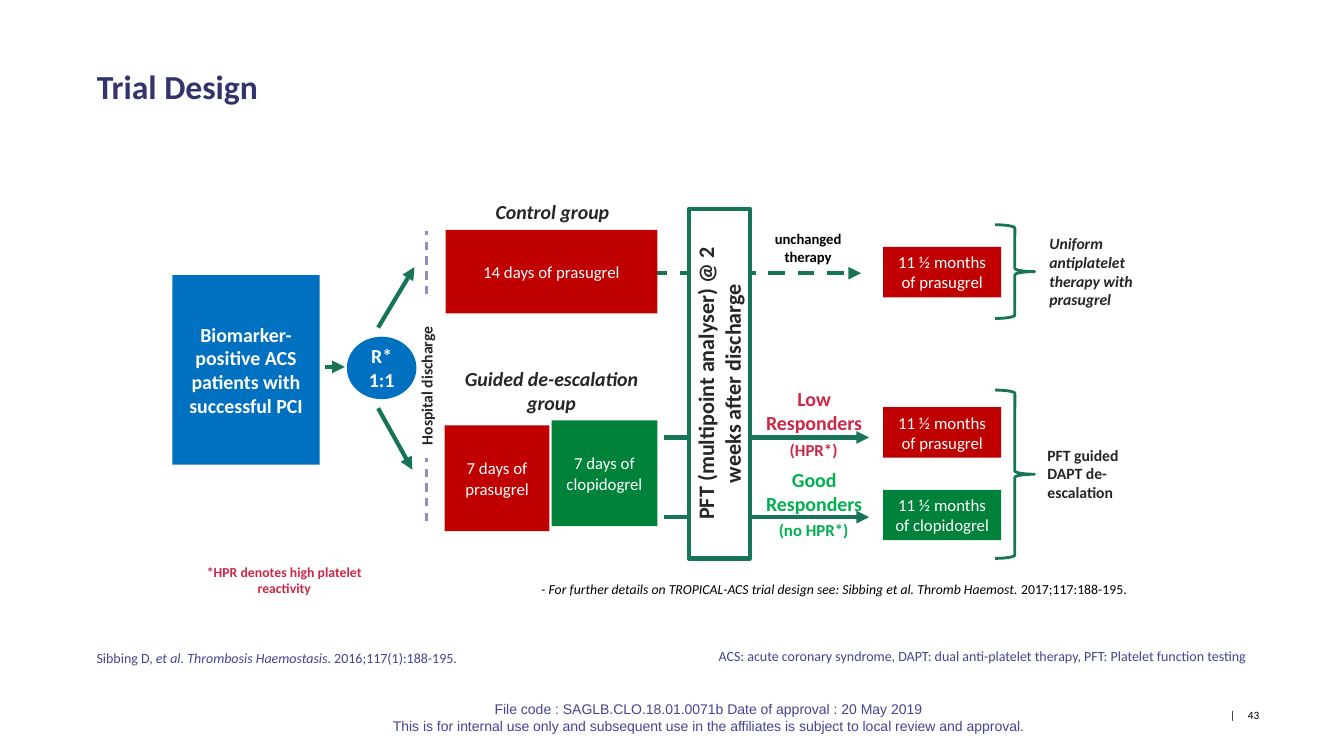
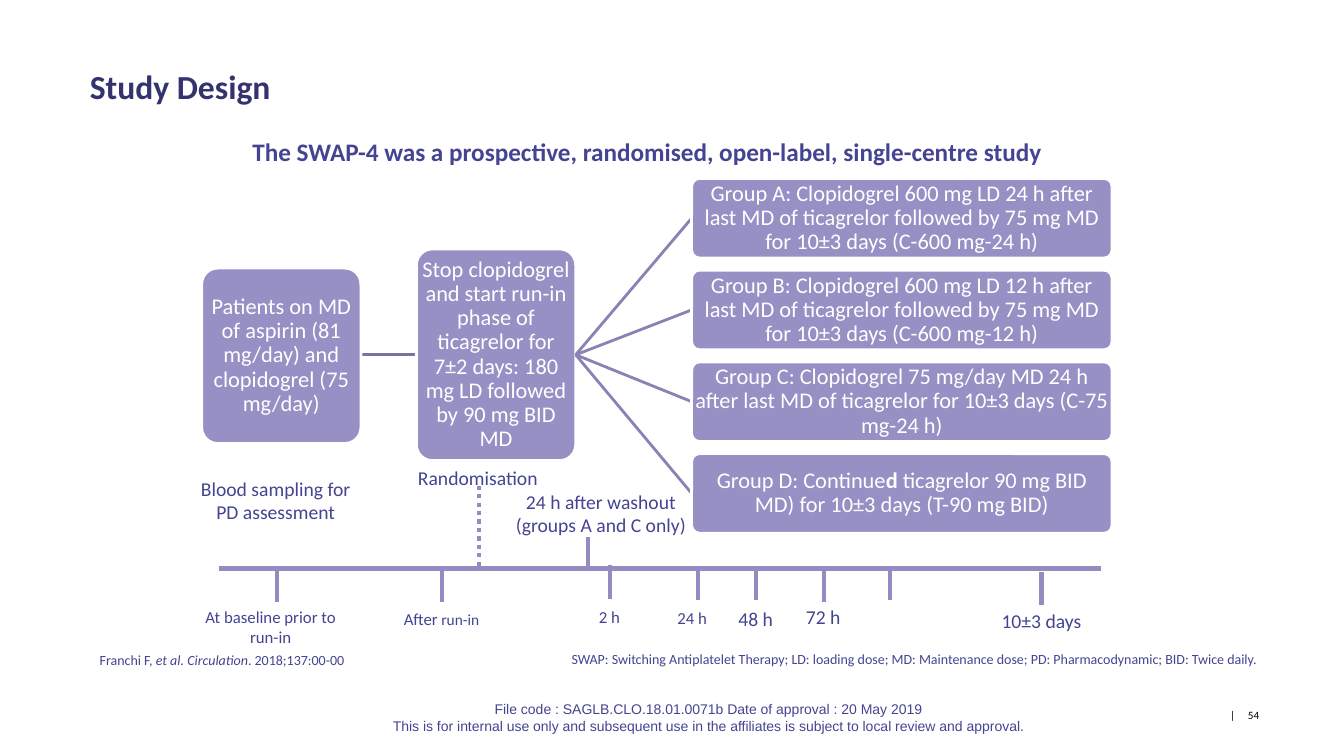
from lxml import etree
from pptx import Presentation
from pptx import util as u
from pptx.dml.color import RGBColor
from pptx.enum import dml, shapes, text
from pptx.oxml import ns

# Shared colours
NAVY = RGBColor(0x33, 0x33, 0x6E)
INDIGO = RGBColor(0x44, 0x44, 0x92)
LILAC = RGBColor(0x92, 0x8C, 0xC1)
BOX_LILAC = RGBColor(0x96, 0x90, 0xC4)
FAN_LILAC = RGBColor(0x88, 0x83, 0xB2)
LINK_LILAC = RGBColor(0x78, 0x73, 0x9D)
BLUE = RGBColor(0x00, 0x70, 0xC0)
RED = RGBColor(0xC0, 0x00, 0x00)
GREEN = RGBColor(0x00, 0x82, 0x3B)
TEAL = RGBColor(0x17, 0x74, 0x58)
CRIMSON = RGBColor(0xCD, 0x27, 0x48)
BRIGHT_GREEN = RGBColor(0x00, 0xB0, 0x50)
CHARCOAL = RGBColor(0x26, 0x26, 0x26)
BLACK = RGBColor(0, 0, 0)
WHITE = RGBColor(0xFF, 0xFF, 0xFF)

SHAPE = shapes.MSO_SHAPE
CENTER, LEFT = text.PP_ALIGN.CENTER, text.PP_ALIGN.LEFT
TOP, MIDDLE, BOTTOM = (text.MSO_ANCHOR.TOP, text.MSO_ANCHOR.MIDDLE,
                       text.MSO_ANCHOR.BOTTOM)
DASH, DOTS = dml.MSO_LINE.DASH, dml.MSO_LINE.ROUND_DOT

FOOTER = [
    "File code : SAGLB.CLO.18.01.0071b Date of approval : 20 May 2019",
    "This is for internal use only and subsequent use in the affiliates "
    "is subject to local review and approval.",
]


def style(size, color, name="Calibri", **extra):
    return {"size": u.Pt(size), "color": color, "name": name, **extra}


NOTE = style(10, INDIGO)
FOOTER_STYLE = style(10, INDIGO, "Arial")
PAGE = style(8, BLACK)
TITLE = style(24, NAVY, bold=True)
BOX = style(12, WHITE)
BOX_BOLD = style(14.2, WHITE, bold=True)
GROUP = style(14.2, CHARCOAL, bold=True, italic=True)
SIDE = style(11.2, CHARCOAL, bold=True)
STEP = style(16, WHITE)
TIMELINE = style(14, INDIGO)
TIMELINE_SMALL = style(12, INDIGO)
ITALIC = {"italic": True}


# Text
def set_font(font, values):
    for key, value in values.items():
        if key == "color":
            font.color.rgb = value
        else:
            setattr(font, key, value)


def write(frame, content, look, align=CENTER, anchor=TOP, spacing=None,
          insets=(0.1, 0.05, 0.1, 0.05)):
    """A paragraph is a string or a list of (words, changes to the look)."""
    sides = ("margin_left", "margin_top", "margin_right", "margin_bottom")
    values = dict(zip(sides, map(u.Inches, insets)))
    values.update(word_wrap=True, vertical_anchor=anchor)
    for key, value in values.items():
        setattr(frame, key, value)
    for number, runs in enumerate(content):
        paragraph = frame.add_paragraph() if number else frame.paragraphs[0]
        paragraph.alignment = align
        if spacing:
            paragraph.line_spacing = spacing
        for words, changes in [(runs, {})] if isinstance(runs, str) else runs:
            run = paragraph.add_run()
            run.text = words
            set_font(run.font, {**look, **changes})


def label(slide, at, content, look, align=CENTER, rotation=0):
    box = slide.shapes.add_textbox(*map(u.Inches, at))
    box.rotation = rotation
    write(box.text_frame, [content], look, align)


# Shapes and lines
def block(slide, at, kind=SHAPE.RECTANGLE, fill=None, line=None, width=2):
    shape = slide.shapes.add_shape(kind, *map(u.Inches, at))
    shape.shadow.inherit = False
    if fill is None:
        shape.fill.background()
    else:
        shape.fill.solid()
        shape.fill.fore_color.rgb = fill
    if line is None:
        shape.line.fill.background()
    else:
        shape.line.color.rgb = line
        shape.line.width = u.Pt(width)
    return shape


def text_block(slide, at, content, fill, look=BOX, kind=SHAPE.RECTANGLE):
    shape = block(slide, at, kind, fill)
    write(shape.text_frame, content, look, anchor=MIDDLE)


def step_box(slide, at, content):
    box = block(slide, at, SHAPE.ROUNDED_RECTANGLE, BOX_LILAC, WHITE)
    box.adjustments[0] = 0.1
    write(box.text_frame, [content], STEP, anchor=MIDDLE, spacing=0.9,
          insets=(0.01,) * 4)


def connect(slide, start, end, color, width=3, dash=None, arrow=False):
    line = slide.shapes.add_connector(
        shapes.MSO_CONNECTOR.STRAIGHT, *map(u.Inches, start + end))
    line.line.color.rgb = color
    line.line.width = u.Pt(width)
    if dash:
        line.line.dash_style = dash
    if arrow:
        tip = etree.SubElement(line.line._get_or_add_ln(), ns.qn("a:tailEnd"))
        tip.set("type", "triangle")
    etree.SubElement(line._element.spPr, ns.qn("a:effectLst"))


# Slide frame: title, footer, page number
def add_page(deck, title, left, page):
    slide = deck.slides.add_slide(deck.slide_layouts[5])
    heading = slide.shapes.title
    place = {"left": left, "top": 0.5, "width": 11.5, "height": 0.76}
    for key, value in place.items():
        setattr(heading, key, u.Inches(value))
    write(heading.text_frame, [title], TITLE, LEFT, MIDDLE, 0.9, (0,) * 4)

    footer = slide.shapes.add_textbox(*map(u.Inches, (2.66, 6.9, 8.73, 0.44)))
    write(footer.text_frame, FOOTER, FOOTER_STYLE)

    number = slide.shapes.add_textbox(*map(u.Inches, (12.2, 7.03, 0.35, 0.26)))
    properties = number.text_frame.paragraphs[0]._p.get_or_add_pPr()
    tabs = etree.SubElement(properties, ns.qn("a:tabLst"))
    stop = etree.SubElement(tabs, ns.qn("a:tab"))
    stop.set("pos", str(u.Inches(0.29)))
    stop.set("algn", "r")
    write(number.text_frame, [f"|\t{page}"], PAGE, LEFT, insets=(0,) * 4)
    return slide


def trial_design(deck):
    slide = add_page(deck, "Trial Design", 0.96, 43)

    # Treatment paths, running behind the test box
    for start, end, y, dash in ((6.59, 8.62, 5.13, None),
                                (6.59, 8.62, 4.34, None),
                                (6.45, 8.54, 2.71, DASH)):
        connect(slide, (start, y), (end, y), TEAL, dash=dash, arrow=True)

    # Patients and randomisation
    text_block(slide, (1.71, 2.73, 1.46, 1.88),
               ["Biomarker-positive ACS patients with successful PCI"],
               BLUE, BOX_BOLD)
    text_block(slide, (3.44, 3.34, 0.69, 0.62), ["R*", "1:1"], BLUE, BOX_BOLD,
               SHAPE.OVAL)
    for start, end in (((3.22, 3.64), (3.42, 3.64)),
                       ((3.75, 3.25), (4.11, 2.65)),
                       ((3.75, 4.05), (4.09, 4.66))):
        connect(slide, start, end, TEAL, arrow=True)
    for top in (2.29, 4.54):
        connect(slide, (4.23, top + 0.63), (4.23, top), LILAC, 1.5, DASH)
    label(slide, (3.43, 3.57, 1.6, 0.29), "Hospital discharge", SIDE, LEFT, 270)

    # Treatment boxes
    for at, words, fill in (
            ((5.47, 4.17, 1.05, 1.05), "7 days of clopidogrel", GREEN),
            ((4.41, 4.22, 1.04, 1.05), "7 days of prasugrel", RED),
            ((4.42, 2.28, 2.1, 0.83), "14 days of prasugrel", RED),
            ((8.76, 2.45, 1.17, 0.5), "11 ½ months of prasugrel", RED),
            ((8.76, 4.04, 1.17, 0.5), "11 ½ months of prasugrel", RED),
            ((8.76, 4.86, 1.17, 0.5), "11 ½ months of clopidogrel", GREEN)):
        text_block(slide, at, [words], fill)
    label(slide, (4.6, 1.93, 1.76, 0.34), "Control group", GROUP)
    label(slide, (4.27, 3.59, 2.4, 0.58), "Guided de-escalation group", GROUP)

    # Platelet function test
    test = block(slide, (5.4, 3.5, 3.47, 0.61), fill=WHITE, line=TEAL, width=3)
    test.rotation = 270
    write(test.text_frame,
          ["PFT (multipoint analyser) @ 2 weeks after discharge"],
          style(15.8, CHARCOAL, bold=True), anchor=BOTTOM)

    # Test results
    label(slide, (7.36, 2.23, 1.31, 0.45), "unchanged therapy",
          style(10.5, BLACK, bold=True))
    for top, who, reactivity, color in (
            (3.79, "Low Responders", "(HPR*)", CRIMSON),
            (4.59, "Good Responders", "(no HPR*)", BRIGHT_GREEN)):
        label(slide, (7.39, top, 1.37, 0.58), who,
              style(14.2, color, bold=True))
        label(slide, (7.44, top + 0.52, 1.26, 0.3), reactivity,
              style(12, color, bold=True))

    # Outcomes
    for top, height in ((2.23, 0.93), (3.87, 1.67)):
        block(slide, (9.87, top, 0.39, height), SHAPE.RIGHT_BRACE, line=TEAL)
    label(slide, (10.31, 2.27, 1.32, 0.86),
          "Uniform antiplatelet therapy with prasugrel", {**SIDE, **ITALIC},
          LEFT)
    label(slide, (10.29, 4.37, 1.28, 0.67), "PFT guided DAPT de-escalation",
          SIDE, LEFT)

    # Notes and references
    label(slide, (1.9, 5.54, 1.84, 0.43),
          "*HPR denotes high platelet reactivity",
          style(9.8, CRIMSON, bold=True))
    label(slide, (5.27, 5.71, 6.24, 0.27),
          [("- For further details on TROPICAL-ACS trial design see: "
            "Sibbing et al. Thromb Haemost. ", ITALIC),
           ("2017;117:188-195.", {})], style(9.8, BLACK), LEFT)
    label(slide, (7.03, 6.37, 6.04, 0.27),
          "ACS: acute coronary syndrome, DAPT: dual anti-platelet therapy, "
          "PFT: Platelet function testing", NOTE, LEFT)
    label(slide, (0.86, 6.39, 3.93, 0.27),
          [("Sibbing D, ", {}), ("et al. Thrombosis Haemostasis", ITALIC),
           (". 2016;117(1):188-195.", {})], NOTE, LEFT)


def study_design(deck):
    slide = add_page(deck, "Study Design", 0.89, 54)
    label(slide, (2.17, 1.3, 8.5, 0.4),
          "The SWAP-4 was a prospective, randomised, open-label, "
          "single-centre study", style(18, INDIGO, bold=True))

    # Run-in
    middle = 3.52
    connect(slide, (3.58, middle), (4.13, middle), LINK_LILAC, 2)
    step_box(slide, (2, 2.66, 1.58, 1.74),
             "Patients on MD of aspirin (81 mg/day) and clopidogrel "
             "(75 mg/day)")
    step_box(slide, (4.13, 2.47, 1.58, 2.1),
             "Stop clopidogrel and start run-in phase of ticagrelor for "
             "7±2 days: 180 mg LD followed by 90 mg BID MD")

    # Four study groups
    groups = (
        "Group A: Clopidogrel 600 mg LD 24 h after last MD of ticagrelor "
        "followed by 75 mg MD for 10±3 days (C-600 mg-24 h)",
        "Group B: Clopidogrel 600 mg LD 12 h after last MD of ticagrelor "
        "followed by 75 mg MD for 10±3 days (C-600 mg-12 h)",
        "Group C: Clopidogrel 75 mg/day MD 24 h after last MD of ticagrelor "
        "for 10±3 days (C-75 mg-24 h)",
        [("Group D: Continue", {}), ("d", {"bold": True}),
         (" ticagrelor 90 mg BID MD) for 10±3 days (T-90 mg BID)", {})],
    )
    height, pitch = 0.79, 0.91
    for row, group in enumerate(groups):
        top = 1.77 + row * pitch
        connect(slide, (5.71, middle), (6.86, top + height / 2), FAN_LILAC, 2)
        step_box(slide, (6.86, top, 4.17, height), group)

    # Blood sampling timeline
    connect(slide, (2.17, 5.64), (10.92, 5.64), LILAC)
    connect(slide, (4.75, 4.82), (4.75, 5.64), LILAC, dash=DOTS)
    for x, top in ((2.75, 5.64), (4.38, 5.64), (5.83, 5.33), (6.05, 5.61),
                   (6.92, 5.62), (7.5, 5.62), (8.17, 5.64), (8.83, 5.62),
                   (10.33, 5.67)):
        connect(slide, (x, top), (x, top + 0.33), LILAC)
    for at, words, look in (
            ((1.87, 4.68, 1.73, 0.57), "Blood sampling for PD assessment",
             TIMELINE),
            ((3.86, 4.57, 1.76, 0.34), "Randomisation", TIMELINE),
            ((4.8, 4.81, 2.32, 0.57),
             "24 h after washout (groups A and C only)", TIMELINE),
            ((1.87, 5.97, 1.63, 0.5), "At baseline prior to run-in",
             TIMELINE_SMALL),
            ((3.5, 5.99, 1.76, 0.3),
             [("After", {}), (" run-in", {"size": u.Pt(11)})], TIMELINE_SMALL),
            ((5.57, 5.97, 0.95, 0.3), "2 h", TIMELINE_SMALL),
            ((6.39, 5.98, 0.95, 0.3), "24 h", TIMELINE_SMALL),
            ((7.02, 5.97, 0.95, 0.34), "48 h", TIMELINE),
            ((7.69, 5.95, 0.95, 0.34), "72 h", TIMELINE),
            ((9.76, 5.99, 1.14, 0.34), "10±3 days", TIMELINE)):
        label(slide, at, words, look)

    # References
    label(slide, (0.89, 6.41, 4.5, 0.27),
          [("Franchi F, ", {}), ("et al. Circulation", ITALIC),
           (". 2018;137:00-00", {})], NOTE, LEFT)
    label(slide, (5.57, 6.4, 7.31, 0.27),
          "SWAP: Switching Antiplatelet Therapy; LD: loading dose; "
          "MD: Maintenance dose; PD: Pharmacodynamic; BID: Twice daily.",
          NOTE, LEFT)


def main():
    deck = Presentation()
    deck.slide_width, deck.slide_height = u.Inches(13.33), u.Inches(7.5)
    trial_design(deck)
    study_design(deck)
    deck.save("out.pptx")


if __name__ == "__main__":
    main()
